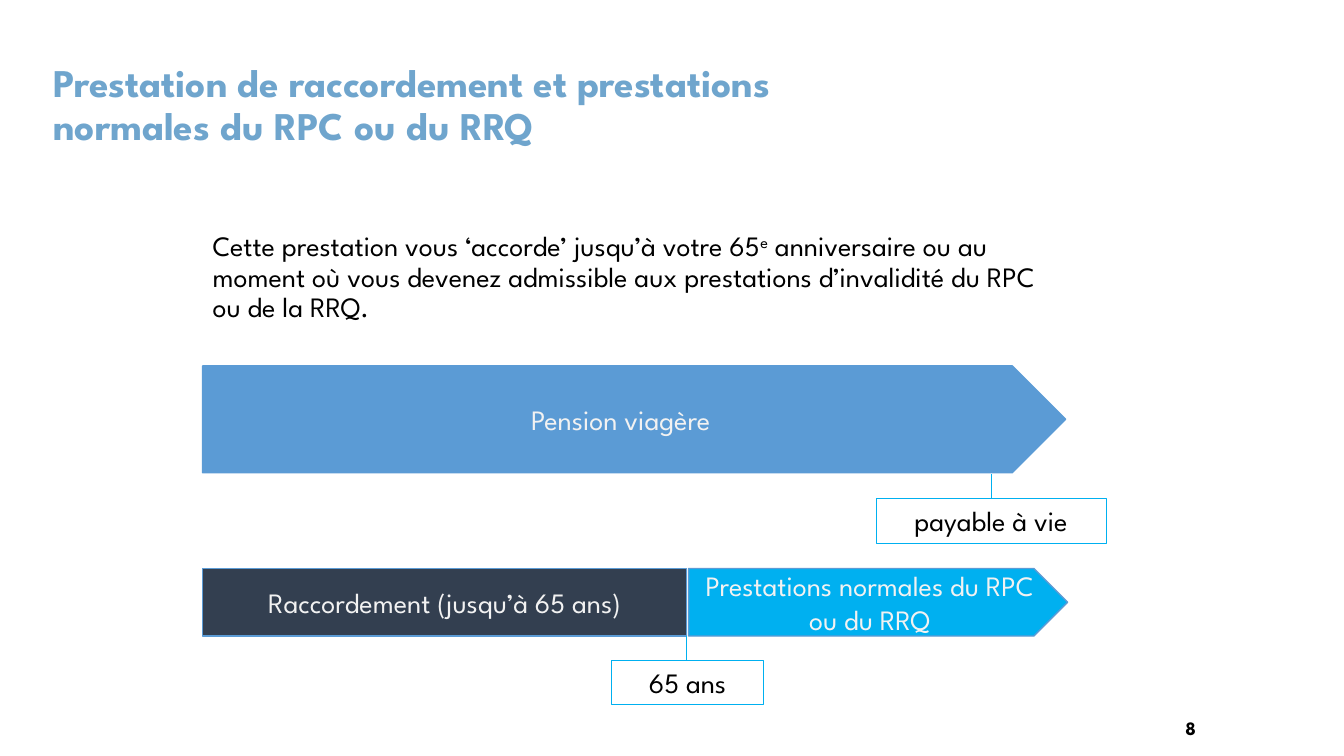
"""Build the slide on bridge benefits and regular RPC or RRQ benefits."""
import dataclasses

import pptx
import pptx.dml.color
import pptx.enum.shapes
import pptx.enum.text
import pptx.oxml
import pptx.oxml.ns
import pptx.util
from pptx.util import Inches

SHAPE = pptx.enum.shapes.MSO_SHAPE
ALIGN = pptx.enum.text.PP_ALIGN
ANCHOR = pptx.enum.text.MSO_ANCHOR


@dataclasses.dataclass(frozen=True)
class Theme:
    font: str = "League Spartan"
    title: str = "6FA5CD"
    ink: str = "000000"
    pale: str = "F2F2F2"
    pension: str = "5B9BD5"
    bridge: str = "333F50"
    benefit: str = "00B0F0"
    title_size: float = 28
    body_size: float = 20
    number_size: float = 13.5


THEME = Theme()


def apply(target, values):
    for name, value in values.items():
        setattr(target, name, value)


def paint(form, color):
    form.solid()
    form.fore_color.rgb = pptx.dml.color.RGBColor.from_string(color)


def outline(line, color, width):
    paint(line.fill, color)
    line.width = pptx.util.Pt(width)


def write(shape, spans, color, size=THEME.body_size, bold=False, frame=None, para=None):
    box = shape.text_frame
    apply(box, {"word_wrap": True, **(frame or {})})
    paragraph = box.paragraphs[0]
    apply(paragraph, para or {})
    for text, raised in spans:
        span = paragraph.add_run()
        span.text = text
        apply(span.font, {"name": THEME.font, "size": pptx.util.Pt(size), "bold": bold})
        paint(span.font.fill, color)
        if raised:
            span.font._element.set("baseline", "30000")


def add_text(page, place, spans, color, **formats):
    box = page.shapes.add_textbox(*map(Inches, place))
    write(box, spans, color, **formats)


def add_block(page, preset, place, text, color, fill, line, width, anchor=ANCHOR.MIDDLE):
    block = page.shapes.add_shape(preset, *map(Inches, place))
    block.shadow.inherit = False
    if fill:
        paint(block.fill, fill)
    else:
        block.fill.background()
    outline(block.line, line, width)
    write(block, [(text, False)], color, frame={"vertical_anchor": anchor},
          para={"alignment": ALIGN.CENTER})


def add_band(page, preset, place, text, fill):
    add_block(page, preset, place, text, THEME.pale, fill, THEME.pension, 1)


def add_label(page, place, text, stem_x, stem_top):
    add_block(page, SHAPE.RECTANGLE, place, text, THEME.ink, None, THEME.benefit, 0.75,
              ANCHOR.TOP)
    ends = map(Inches, (stem_x, stem_top, stem_x, place[1]))
    stem = page.shapes.add_connector(pptx.enum.shapes.MSO_CONNECTOR.STRAIGHT, *ends)
    outline(stem.line, THEME.benefit, 0.5)
    properties = stem._element.spPr
    properties.append(pptx.oxml.parse_xml(
        f"<a:effectLst {pptx.oxml.ns.nsdecls('a')}/>"))


def main():
    deck = pptx.Presentation()
    apply(deck, {"slide_width": Inches(13.33), "slide_height": Inches(7.5)})
    page = deck.slides.add_slide(deck.slide_layouts[6])

    add_text(page, (0.46, 0.63, 8.1, 0.85),
             [("Prestation de raccordement et prestations normales du RPC ou du RRQ", False)],
             THEME.title, size=THEME.title_size, bold=True,
             frame={"vertical_anchor": ANCHOR.MIDDLE, "margin_left": Inches(0.07),
                    "margin_right": Inches(0.07), "margin_top": 0, "margin_bottom": 0},
             para={"line_spacing": 0.9})
    add_text(page, (2.01, 2.26, 8.66, 0.97),
             [("Cette prestation vous ‘accorde’ jusqu’à votre 65", False),
              ("e", True),
              (" anniversaire ou au moment où vous devenez admissible aux prestations "
               "d’invalidité du RPC ou de la RRQ.", False)],
             THEME.ink, para={"line_spacing": 0.9})

    add_band(page, SHAPE.PENTAGON, (2.01, 3.63, 8.56, 1.06), "Pension viagère", THEME.pension)
    add_band(page, SHAPE.RECTANGLE, (2.01, 5.64, 4.8, 0.67),
             "Raccordement (jusqu’à 65 ans)", THEME.bridge)
    add_band(page, SHAPE.PENTAGON, (6.83, 5.64, 3.76, 0.67),
             "Prestations normales du RPC ou du RRQ", THEME.benefit)

    add_label(page, (6.07, 6.55, 1.5, 0.44), "65 ans", 6.81, 6.31)
    add_label(page, (8.69, 4.95, 2.28, 0.44), "payable à vie", 9.83, 4.7)

    add_text(page, (9.71, 7.06, 2.25, 0.3), [("8", False)], THEME.ink,
             size=THEME.number_size, bold=True, para={"alignment": ALIGN.RIGHT})
    deck.save("out.pptx")


if __name__ == "__main__":
    main()
